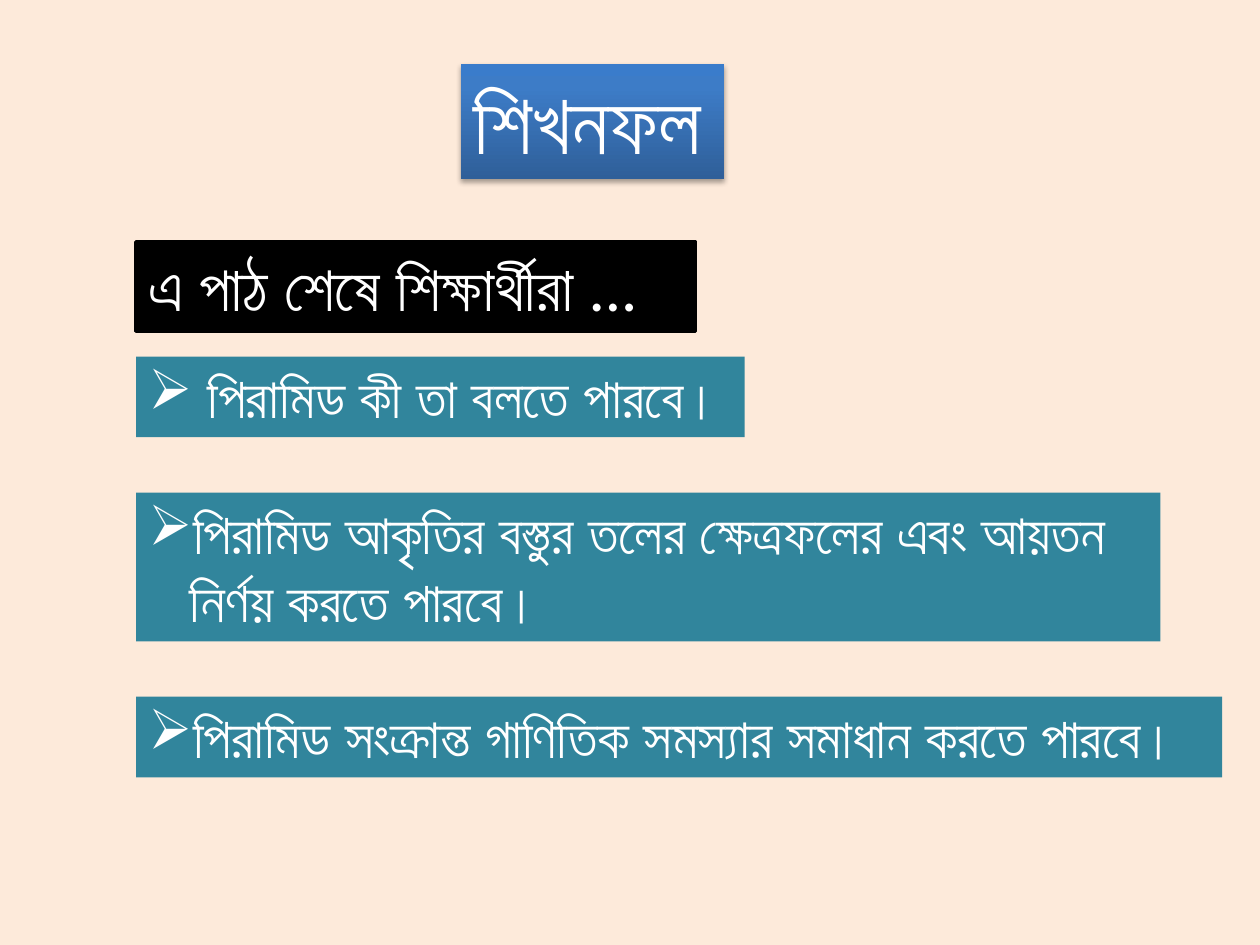
from lxml.etree import SubElement
from pptx import Presentation
from pptx.dml.color import RGBColor
from pptx.enum.text import MSO_AUTO_SIZE
from pptx.oxml import parse_xml
from pptx.oxml.ns import qn
from pptx.util import Inches, Pt

FONT = "Lato"
COLORS = {"back": "FDEADA", "text": "FFFFFF", "lead": "000000", "goal": "31859C"}
NS = 'xmlns:a="http://schemas.openxmlformats.org/drawingml/2006/main"'
STOPS = [(0, "2F5F99"), (80, "3D7CC7"), (100, "3A7CCB")]
LEFT = 1.08

TITLE = "শিখনফল"
LEAD = "এ পাঠ শেষে শিক্ষার্থীরা …"
# top, width, height, hanging indent, lines
GOALS = [
    (2.83, 4.83, 0.64, 0.47, ["পিরামিড কী তা বলতে পারবে।"]),
    (3.91, 8.13, 1.18, 0, ["পিরামিড আকৃতির বস্তুর তলের ক্ষেত্রফলের এবং আয়তন",
                           "নির্ণয় করতে পারবে।"]),
    (5.53, 8.62, 0.64, 0, ["পিরামিড সংক্রান্ত গাণিতিক সমস্যার সমাধান করতে পারবে।"]),
]


def rgb(name):
    return RGBColor.from_string(COLORS[name])


def add_text(slide, lines, at, size, fill=None, bullet=None, hang=0, rest=0):
    """Add a box; the first line may have a bullet, later ones are indented by rest."""
    box = slide.shapes.add_textbox(*[Inches(n) for n in at])
    if fill:
        box.fill.solid()
        box.fill.fore_color.rgb = rgb(fill)
    frame = box.text_frame
    frame.word_wrap = False
    frame.auto_size = MSO_AUTO_SIZE.SHAPE_TO_FIT_TEXT
    for i, line in enumerate(lines):
        para = frame.paragraphs[0] if i == 0 else frame.add_paragraph()
        props = para._p.get_or_add_pPr()
        if bullet and i == 0:
            props.set("marL", str(Inches(hang)))
            props.set("indent", str(-Inches(hang)))
            SubElement(props, qn("a:buChar")).set("char", bullet)
        elif i:
            props.set("marL", str(Inches(rest)))
        run = para.add_run()
        run.text = line
        font = run.font
        font.name, font.size = FONT, Pt(size)
        font.color.rgb = rgb("text")
        SubElement(font._element, qn("a:cs")).set("typeface", FONT)
    return box


def add_glow(box):
    """Give the title its three-stop gradient and soft shadow."""
    box.fill.gradient()
    box.fill.gradient_angle = 90
    props = box._element.spPr
    old = props.find(".//" + qn("a:gsLst"))
    stops = "".join(f'<a:gs pos="{pos * 1000}"><a:srgbClr val="{color}"/></a:gs>'
                    for pos, color in STOPS)
    old.getparent().replace(old, parse_xml(f"<a:gsLst {NS}>{stops}</a:gsLst>"))
    props.append(parse_xml(
        f'<a:effectLst {NS}><a:outerShdw blurRad="{Pt(3.1)}" dist="{Pt(1.8)}" '
        'dir="5400000" rotWithShape="0"><a:srgbClr val="000000">'
        '<a:alpha val="35000"/></a:srgbClr></a:outerShdw></a:effectLst>'))


def main():
    deck = Presentation()
    deck.slide_width, deck.slide_height = Inches(10), Inches(7.5)
    slide = deck.slides.add_slide(deck.slide_layouts[6])
    slide.background.fill.solid()
    slide.background.fill.fore_color.rgb = rgb("back")

    add_glow(add_text(slide, [TITLE], (3.66, 0.51, 2.09, 0.91), 48))
    lead = add_text(slide, [LEAD], (LEFT, 1.92, 4.44, 0.71), 36, fill="lead")
    lead.line.color.rgb = rgb("lead")
    lead.line.width = Pt(2)
    for top, width, height, hang, lines in GOALS:
        add_text(slide, lines, (LEFT, top, width, height), 32, fill="goal",
                 bullet="➢", hang=hang, rest=0.33)
    deck.save("out.pptx")


if __name__ == "__main__":
    main()
